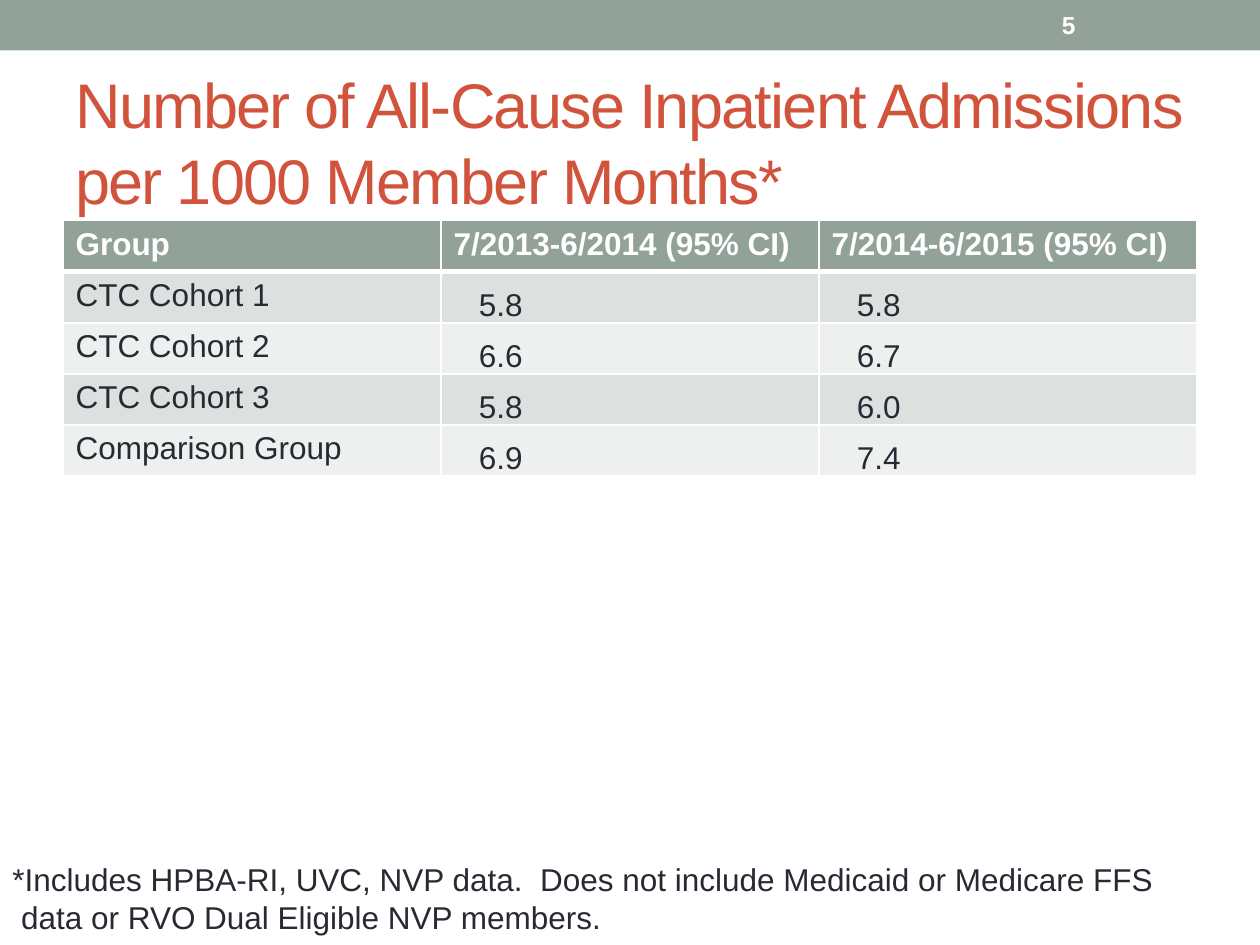
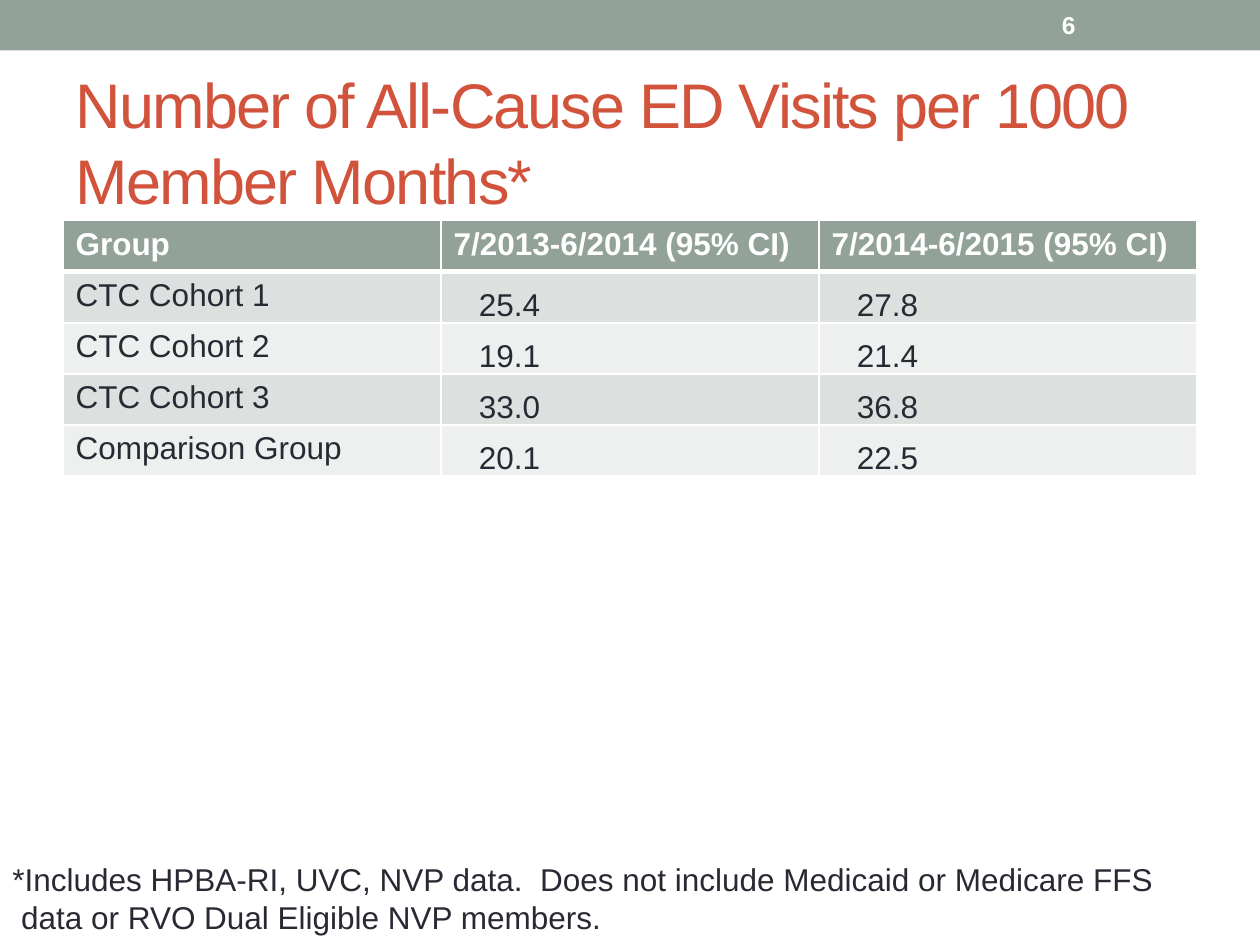
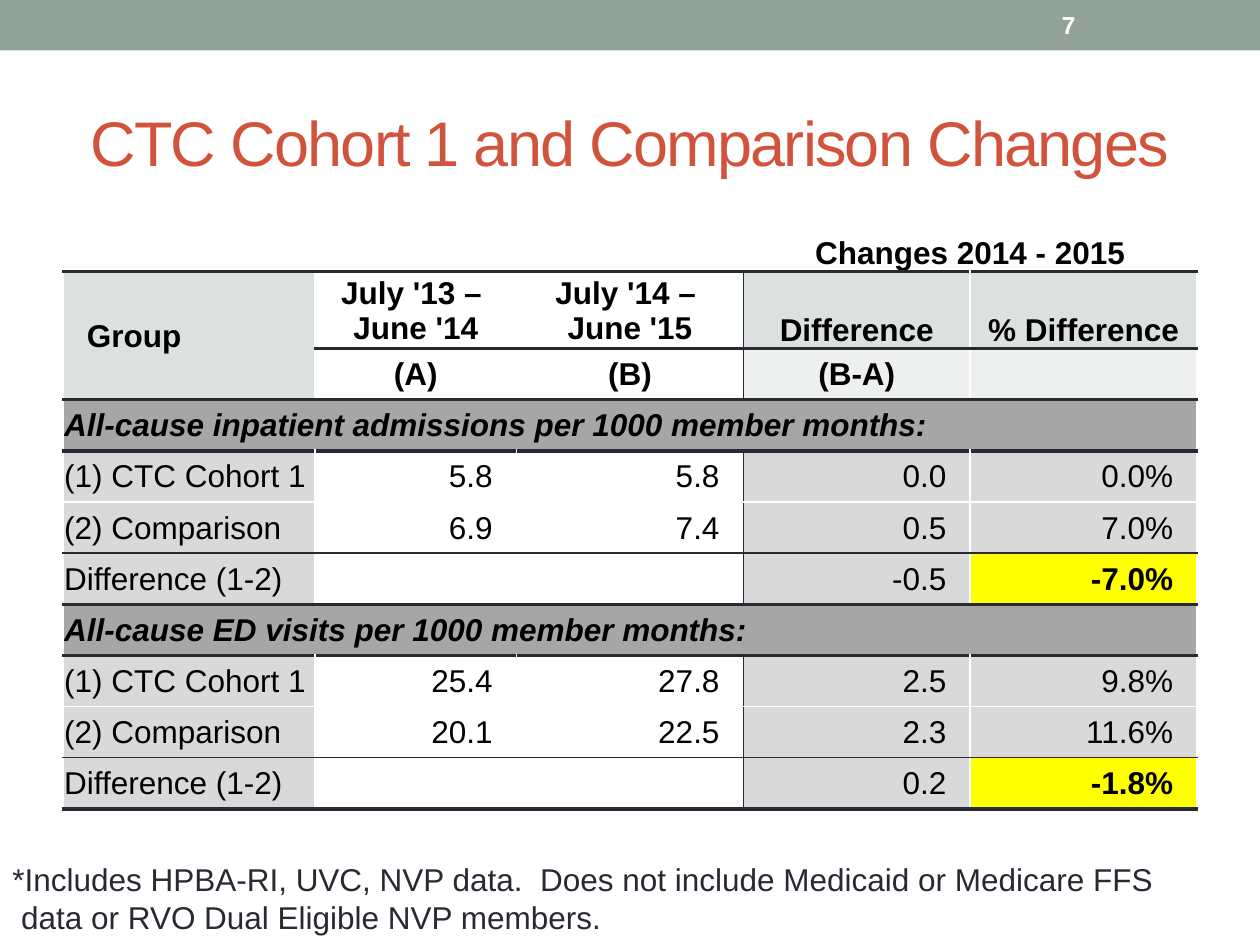
"""Build three slides comparing admissions and ED visits across cohorts."""
from dataclasses import dataclass, replace
from typing import NamedTuple, Optional

import lxml.etree
import pptx
import pptx.dml.color
import pptx.enum.shapes
import pptx.enum.text
import pptx.oxml.ns
import pptx.util

Inches = pptx.util.Inches
ALIGN = pptx.enum.text.PP_ALIGN
ANCHOR = pptx.enum.text.MSO_ANCHOR


@dataclass(frozen=True)
class Theme:
    font: str = "Arial"
    sage: str = "93A299"
    rust: str = "D2533C"
    ink: str = "292934"
    white: str = "FFFFFF"
    black: str = "000000"
    band_dark: str = "DCE0DE"
    band_light: str = "EEF0EF"
    section: str = "A6A6A6"
    gray: str = "D9D9D9"
    highlight: str = "FFFF00"
    title_size: int = 36
    body_size: int = 18
    number_size: int = 14


class Frame(NamedTuple):
    left: float
    top: float
    width: float
    height: float

    def lengths(self) -> list[int]:
        return [Inches(value) for value in self]


class Insets(NamedTuple):
    left: float
    top: float
    right: float
    bottom: float


class Border(NamedTuple):
    color: str
    width: float


class Borders(NamedTuple):
    left: Border
    right: Border
    top: Border
    bottom: Border


@dataclass(frozen=True)
class TextStyle:
    size: int
    color: str
    bold: bool = False
    italic: bool = False
    align: ALIGN = ALIGN.LEFT


@dataclass(frozen=True)
class CellStyle:
    text: TextStyle
    fill: Optional[str] = None
    anchor: ANCHOR = ANCHOR.MIDDLE
    insets: Insets = Insets(0.01, 0.01, 0.01, 0)


@dataclass(frozen=True)
class RateSlide:
    number: int
    title: str
    rates: list[tuple[str, str]]


THEME = Theme()
BAND = Frame(0, 0, 10, 0.4)
TITLE = Frame(0.5, 0.58, 9, 1.08)
NUMBER = Frame(8.33, 0.02, 1.17, 0.36)
FOOTNOTE = Frame(0, 6.78, 9.37, 0.71)
TABLE_LEFT, TABLE_TOP, TABLE_WIDTH = 0.5, 1.75, 9
ROW_HEIGHT = Inches(2.03) // 5
TALL_ROW_HEIGHT = Inches(0.57)
DEFAULT_INSETS = Insets(0.1, 0.05, 0.1, 0.05)

THIN_WHITE = Border(THEME.white, 1)
THICK_WHITE = Border(THEME.white, 3)
THIN_INK = Border(THEME.ink, 1)
THICK_INK = Border(THEME.ink, 2.25)

FOOTNOTE_LINES = [
    "*Includes HPBA-RI, UVC, NVP data.  Does not include Medicaid or Medicare FFS",
    " data or RVO Dual Eligible NVP members.",
]
RATE_HEADER = ("Group", "7/2013-6/2014 (95% CI)", "7/2014-6/2015 (95% CI)")
RATE_GROUPS = ("CTC Cohort 1", "CTC Cohort 2", "CTC Cohort 3", "Comparison Group")
RATE_SLIDES = [
    RateSlide(5, "Number of All-Cause Inpatient Admissions per 1000 Member Months*",
              [("5.8", "5.8"), ("6.6", "6.7"), ("5.8", "6.0"), ("6.9", "7.4")]),
    RateSlide(6, "Number of All-Cause ED Visits per 1000 Member Months*",
              [("25.4", "27.8"), ("19.1", "21.4"), ("33.0", "36.8"), ("20.1", "22.5")]),
]
CHANGE_COLUMNS = (2, 1.6, 1.8, 1.8, 1.8)
CHANGE_ROWS = [
    ("", "", "", "Changes 2014 - 2015", ""),
    ("Group", "July '13 – \nJune '14", "July '14 – \nJune '15", "Difference", "% Difference"),
    ("", "(A)", "(B)", "(B-A)", ""),
    ("All-cause inpatient admissions per 1000 member months:", "", "", "", ""),
    ("(1) CTC Cohort 1", "5.8", "5.8", "0.0", "0.0%"),
    ("(2) Comparison", "6.9", "7.4", "0.5", "7.0%"),
    ("Difference (1-2)", "", "", "-0.5", "-7.0%"),
    ("All-cause ED visits per 1000 member months:", "", "", "", ""),
    ("(1) CTC Cohort 1", "25.4", "27.8", "2.5", "9.8%"),
    ("(2) Comparison", "20.1", "22.5", "2.3", "11.6%"),
    ("Difference (1-2)", "", "", "0.2", "-1.8%"),
]
SECTION_ROWS = (3, 7)
COHORT_ROWS = (4, 8)
COMPARISON_ROWS = (5, 9)
DIFFERENCE_ROWS = (6, 10)


def rgb(color: str) -> pptx.dml.color.RGBColor:
    return pptx.dml.color.RGBColor.from_string(color)


def style_paragraph(para, style: TextStyle) -> None:
    para.alignment = style.align
    para.font.name = THEME.font
    para.font.size = pptx.util.Pt(style.size)
    para.font.color.rgb = rgb(style.color)
    para.font.bold = style.bold
    para.font.italic = style.italic


def add_text(page, frame: Frame, lines: list[str], style: TextStyle,
             anchor: ANCHOR = ANCHOR.MIDDLE, wrap: bool = True):
    box = page.shapes.add_textbox(*frame.lengths())
    box.text_frame.word_wrap = wrap
    box.text_frame.vertical_anchor = anchor
    box.text_frame.text = "\n".join(lines)
    for para in box.text_frame.paragraphs:
        style_paragraph(para, style)
    return box


def add_page(deck, number: int, title: str, title_align: ALIGN = ALIGN.LEFT):
    page = deck.slides.add_slide(deck.slide_layouts[6])
    band = page.shapes.add_shape(pptx.enum.shapes.MSO_SHAPE.RECTANGLE, *BAND.lengths())
    band.shadow.inherit = False
    band.fill.solid()
    band.fill.fore_color.rgb = rgb(THEME.sage)
    band.line.fill.background()

    title_style = TextStyle(THEME.title_size, THEME.rust, align=title_align)
    heading = add_text(page, TITLE, [title], title_style)
    for span in heading.text_frame.paragraphs[0].runs:
        span._r.get_or_add_rPr().set("spc", "-100")
    add_text(page, NUMBER, [str(number)], TextStyle(THEME.number_size, THEME.white, bold=True))
    footnote = add_text(page, FOOTNOTE, FOOTNOTE_LINES, TextStyle(THEME.body_size, THEME.ink),
                        ANCHOR.TOP, wrap=False)
    footnote.text_frame.auto_size = pptx.enum.text.MSO_AUTO_SIZE.SHAPE_TO_FIT_TEXT
    return page


def add_table(page, columns: tuple[float, ...], row_heights: list[int]):
    table = page.shapes.add_table(
        len(row_heights), len(columns), Inches(TABLE_LEFT), Inches(TABLE_TOP),
        Inches(TABLE_WIDTH), sum(row_heights)).table
    table.first_row = table.horz_banding = False
    for column, width in zip(table.columns, columns):
        column.width = Inches(width)
    for row, height in zip(table.rows, row_heights):
        row.height = height
    return table


def set_borders(cell, borders: Borders) -> None:
    properties = cell._tc.get_or_add_tcPr()
    qualified = pptx.oxml.ns.qn
    for tag, border in zip(("a:lnL", "a:lnR", "a:lnT", "a:lnB"), borders):
        line = lxml.etree.SubElement(properties, qualified(tag),
                                     w=str(pptx.util.Pt(border.width)))
        fill = lxml.etree.SubElement(line, qualified("a:solidFill"))
        lxml.etree.SubElement(fill, qualified("a:srgbClr"), val=border.color)


def write_cell(cell, text: str, style: CellStyle, borders: Borders) -> None:
    set_borders(cell, borders)
    if style.fill:
        cell.fill.solid()
        cell.fill.fore_color.rgb = rgb(style.fill)
    else:
        cell.fill.background()
    cell.vertical_anchor = style.anchor
    cell.margin_left, cell.margin_top, cell.margin_right, cell.margin_bottom = (
        Inches(value) for value in style.insets)
    para = cell.text_frame.paragraphs[0]
    para.text = text
    style_paragraph(para, style.text)


def rate_style(row: int, column: int) -> CellStyle:
    if row == 0:
        return CellStyle(TextStyle(THEME.body_size, THEME.white, bold=True),
                         THEME.sage, ANCHOR.TOP, DEFAULT_INSETS)
    fill = THEME.band_dark if row % 2 else THEME.band_light
    label = CellStyle(TextStyle(THEME.body_size, THEME.ink), fill, ANCHOR.TOP, DEFAULT_INSETS)
    if column == 0:
        return label
    return replace(label, anchor=ANCHOR.BOTTOM, insets=Insets(0.3, 0.01, 0.01, 0))


def add_rate_slide(deck, slide: RateSlide) -> None:
    page = add_page(deck, slide.number, slide.title)
    rows = [RATE_HEADER] + [(group, *rates) for group, rates in zip(RATE_GROUPS, slide.rates)]
    table = add_table(page, (3, 3, 3), [ROW_HEIGHT] * len(rows))
    for row, values in enumerate(rows):
        borders = Borders(THIN_WHITE, THIN_WHITE,
                          THICK_WHITE if row == 1 else THIN_WHITE,
                          THICK_WHITE if row == 0 else THIN_WHITE)
        for column, value in enumerate(values):
            write_cell(table.cell(row, column), value, rate_style(row, column), borders)


def change_style(row: int, column: int) -> CellStyle:
    plain = TextStyle(THEME.body_size, THEME.black)
    bold = replace(plain, bold=True)
    centered = replace(bold, align=ALIGN.CENTER)
    shaded = column in (0, 3, 4)
    if row == 0:
        return CellStyle(centered, anchor=ANCHOR.BOTTOM)
    if row in SECTION_ROWS:
        return CellStyle(replace(bold, italic=True), THEME.section)
    if row in (1, 2):
        if column == 0:
            return CellStyle(bold, THEME.band_dark, insets=Insets(0.19, 0.01, 0.01, 0))
        fill = THEME.band_dark if row == 1 else THEME.band_light
        anchor = ANCHOR.BOTTOM if row == 1 and shaded else ANCHOR.MIDDLE
        return CellStyle(centered, fill if shaded else None, anchor)
    if column == 0:
        return CellStyle(plain, THEME.gray)
    key = row in DIFFERENCE_ROWS and column == 4
    fill = THEME.highlight if key else THEME.gray if shaded else None
    return CellStyle(replace(plain, bold=key, align=ALIGN.RIGHT), fill,
                     insets=Insets(0.01, 0.01, 0.19, 0))


def rule_below(row: int) -> Border:
    if row < 0 or row in COHORT_ROWS:
        return THIN_WHITE
    return THIN_INK if row in COMPARISON_ROWS else THICK_INK


def change_borders(row: int, column: int) -> Borders:
    divider = THIN_WHITE if row == 0 or row in SECTION_ROWS else THIN_INK
    return Borders(divider if column == 3 else THIN_WHITE,
                   divider if column == 2 else THIN_WHITE,
                   rule_below(row - 1), rule_below(row))


def add_change_slide(deck) -> None:
    page = add_page(deck, 7, "CTC Cohort 1 and Comparison Changes", ALIGN.CENTER)
    heights = [TALL_ROW_HEIGHT if row == 1 else ROW_HEIGHT for row in range(len(CHANGE_ROWS))]
    table = add_table(page, CHANGE_COLUMNS, heights)
    for row, values in enumerate(CHANGE_ROWS):
        for column, value in enumerate(values):
            write_cell(table.cell(row, column), value,
                       change_style(row, column), change_borders(row, column))
    table.cell(0, 3).merge(table.cell(0, 4))
    table.cell(1, 0).merge(table.cell(2, 0))
    for row in SECTION_ROWS:
        table.cell(row, 0).merge(table.cell(row, 4))


def main() -> None:
    deck = pptx.Presentation()
    deck.slide_width, deck.slide_height = Inches(10), Inches(7.5)
    for slide in RATE_SLIDES:
        add_rate_slide(deck, slide)
    add_change_slide(deck)
    deck.save("out.pptx")


if __name__ == "__main__":
    main()
